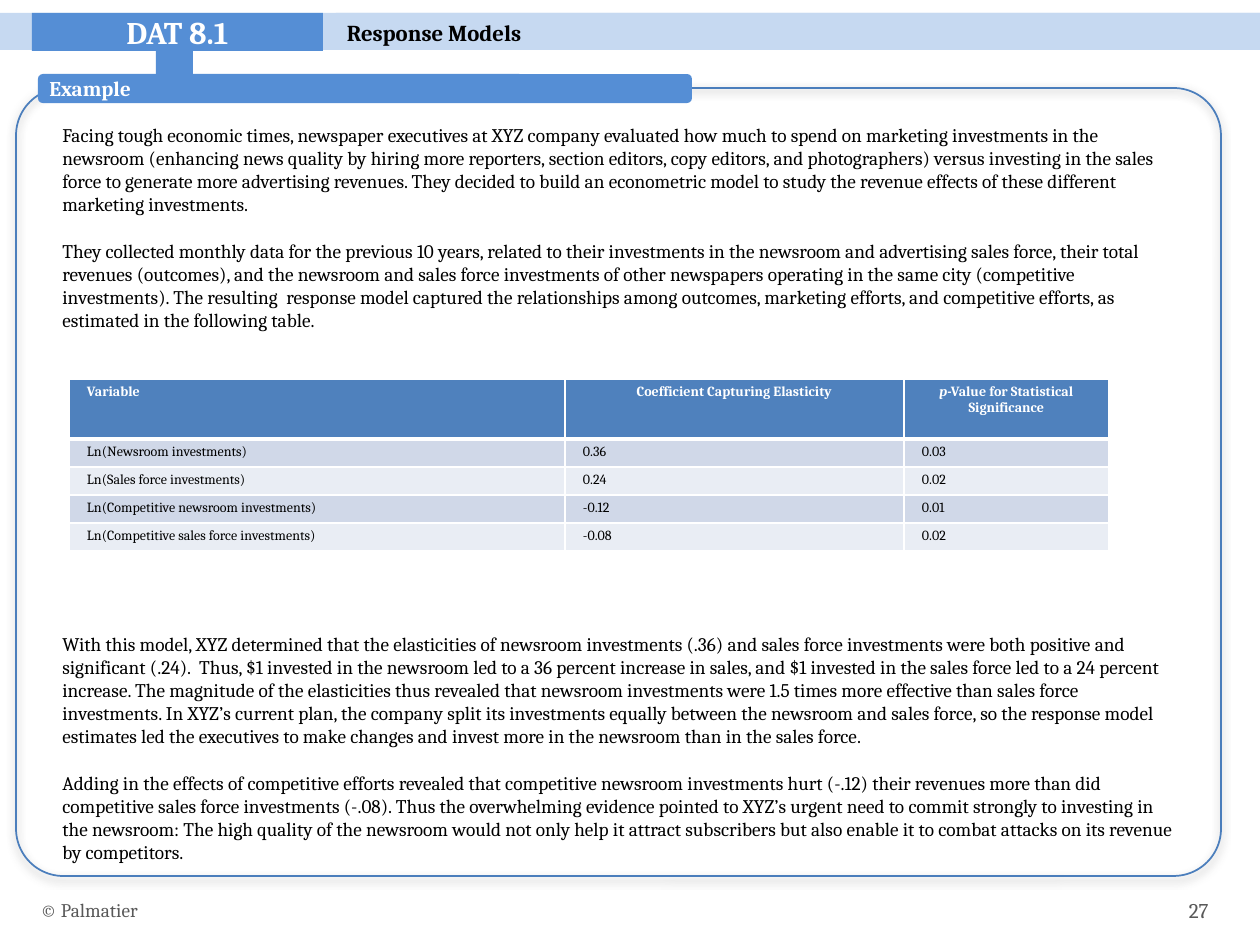
"""Build the Response Models example slide with its elasticity table."""
from lxml import etree
from pptx import Presentation
from pptx import util as u
from pptx.dml.color import RGBColor
from pptx.enum import shapes, text
from pptx.oxml import parse_xml
from pptx.oxml.ns import nsdecls

PX = 914400 // 126
FONT = "Cambria"
BLACK, WHITE = RGBColor(0, 0, 0), RGBColor(255, 255, 255)
GRAY = RGBColor(0x59, 0x59, 0x59)
PALE, BLUE = RGBColor(0xC6, 0xD9, 0xF1), RGBColor(0x55, 0x8E, 0xD5)
OUTLINE, HEAD = RGBColor(0x4B, 0x7E, 0xBC), RGBColor(0x4F, 0x81, 0xBD)
BANDS = RGBColor(0xD0, 0xD8, 0xE8), RGBColor(0xE9, 0xED, 0xF4)
RECT = shapes.MSO_SHAPE.RECTANGLE
ROUND = shapes.MSO_SHAPE.ROUNDED_RECTANGLE
TOP, MIDDLE = text.MSO_ANCHOR.TOP, text.MSO_ANCHOR.MIDDLE
LEFT, CENTER, RIGHT = text.PP_ALIGN.LEFT, text.PP_ALIGN.CENTER, text.PP_ALIGN.RIGHT

STORY = [
    (0, "Facing tough economic times, newspaper executives at XYZ company evaluated how much to spend on "
        "marketing investments in the newsroom (enhancing news quality by hiring more reporters, section "
        "editors, copy editors, and photographers) versus investing in the sales force to generate more "
        "advertising revenues. They decided to build an econometric model to study the revenue effects of "
        "these different marketing investments."),
    (13.2, "They collected monthly data for the previous 10 years, related to their investments in the "
           "newsroom and advertising sales force, their total revenues (outcomes), and the newsroom and sales "
           "force investments of other newspapers operating in the same city (competitive investments). The "
           "resulting  response model captured the relationships among outcomes, marketing efforts, and "
           "competitive efforts, as estimated in the following table."),
    (172, "With this model, XYZ determined that the elasticities of newsroom investments (.36) and sales force "
          "investments were both positive and significant (.24).  Thus, $1 invested in the newsroom led to a "
          "36 percent increase in sales, and $1 invested in the sales force led to a 24 percent increase. The "
          "magnitude of the elasticities thus revealed that newsroom investments were 1.5 times more effective "
          "than sales force investments. In XYZ’s current plan, the company split its investments equally "
          "between the newsroom and sales force, so the response model estimates led the executives to make "
          "changes and invest more in the newsroom than in the sales force."),
    (13.2, "Adding in the effects of competitive efforts revealed that competitive newsroom investments hurt "
           "(-.12) their revenues more than did competitive sales force investments (-.08). Thus the "
           "overwhelming evidence pointed to XYZ’s urgent need to commit strongly to investing in the "
           "newsroom: The high quality of the newsroom would not only help it attract subscribers but also "
           "enable it to combat attacks on its revenue by competitors."),
]
ELASTICITIES = [
    ("Variable", "Coefficient Capturing Elasticity", "p-Value for Statistical Significance"),
    ("Ln(Newsroom investments)", "0.36", "0.03"),
    ("Ln(Sales force investments)", "0.24", "0.02"),
    ("Ln(Competitive newsroom investments)", "-0.12", "0.01"),
    ("Ln(Competitive sales force investments)", "-0.08", "0.02"),
]
COLUMNS, ROWS = (496, 339, 205), (60, 28, 28, 28, 28)


def px(*lengths):
    return [length * PX for length in lengths]


def write(paragraph, words, size, color, align=LEFT, **styles):
    paragraph.alignment = align
    run = paragraph.add_run()
    run.text = words
    run.font.color.rgb = color
    for key, value in dict(name=FONT, size=u.Pt(size), **styles).items():
        setattr(run.font, key, value)


def set_frame(frame, anchor, side=None, edge=None):
    frame.word_wrap, frame.vertical_anchor = True, anchor
    if side is not None:
        frame.margin_left = frame.margin_right = side * PX
        frame.margin_top = frame.margin_bottom = edge * PX
    return frame.paragraphs[0]


def add_block(slide, preset, box, fill=None):
    block = slide.shapes.add_shape(preset, *px(*box))
    block.shadow.inherit = False
    block.line.fill.background()
    if fill is None:
        block.fill.background()
    else:
        block.fill.solid()
        block.fill.fore_color.rgb = fill
    return block


def add_caption(slide, box, words, size, align):
    caption = slide.shapes.add_textbox(*px(*box))
    write(set_frame(caption.text_frame, MIDDLE), words, size, GRAY, align)


def add_story(slide):
    story = slide.shapes.add_textbox(*px(50, 117, 1137, 759)).text_frame
    paragraph = set_frame(story, TOP)
    for index, (gap, words) in enumerate(STORY):
        if index:
            paragraph = story.add_paragraph()
        paragraph.space_before = u.Pt(gap)
        write(paragraph, words, 11, BLACK)


def add_border(slide):
    border = add_block(slide, ROUND, (16, 88, 1205, 788))
    border.adjustments[0] = 0.06
    border.line.color.rgb = OUTLINE
    border.line.width = u.Pt(1)
    effects = border._element.spPr.find("{*}effectLst")
    effects.append(parse_xml(
        f'<a:outerShdw {nsdecls("a")} blurRad="{u.Pt(5)}" dist="{u.Pt(2)}" dir="5400000" rotWithShape="0">'
        '<a:srgbClr val="808080"><a:alpha val="75000"/></a:srgbClr></a:outerShdw>'))


def border_cell(cell, is_head):
    properties = cell._tc.get_or_add_tcPr()
    for index, side in enumerate(("lnL", "lnR", "lnT", "lnB")):
        width = u.Pt(3 if is_head and side == "lnB" else 1)
        line = parse_xml(f'<a:{side} {nsdecls("a")} w="{width}"/>')
        color = etree.SubElement(line, line.tag.replace(side, "solidFill"))
        etree.SubElement(color, line.tag.replace(side, "srgbClr"), val=str(WHITE))
        properties.insert(index, line)


def add_elasticities(slide):
    table = slide.shapes.add_table(len(ROWS), len(COLUMNS), *px(69, 379, sum(COLUMNS), sum(ROWS))).table
    for column, width in zip(table.columns, COLUMNS):
        column.width = width * PX
    for row, (height, values) in enumerate(zip(ROWS, ELASTICITIES)):
        table.rows[row].height = height * PX
        is_head = row == 0
        for column, words in enumerate(values):
            cell = table.cell(row, column)
            cell.margin_left = cell.margin_right = 18 * PX
            cell.margin_top = cell.margin_bottom = 5 * PX
            cell.fill.solid()
            cell.fill.fore_color.rgb = HEAD if is_head else BANDS[(row - 1) % 2]
            border_cell(cell, is_head)
            paragraph = cell.text_frame.paragraphs[0]
            style = dict(size=8, color=WHITE if is_head else BLACK, bold=is_head,
                         align=CENTER if is_head and column else LEFT)
            if words.startswith("p-"):
                write(paragraph, "p", italic=True, **style)
                words = words[1:]
            write(paragraph, words, italic=False, **style)


def main():
    deck = Presentation()
    deck.slide_width, deck.slide_height = px(1260, 945)
    slide = deck.slides.add_slide(deck.slide_layouts[6])
    add_story(slide)
    add_block(slide, RECT, (0, 13, 1260, 37), PALE)
    title = add_block(slide, RECT, (336, 13, 924, 37), PALE)
    write(set_frame(title.text_frame, TOP, 11, 6), "Response Models", 13, BLACK, bold=True)
    number = add_block(slide, RECT, (32, 13, 291, 38), BLUE)
    write(set_frame(number.text_frame, MIDDLE, 10, 5), "DAT 8.1", 18, WHITE, CENTER, bold=True)
    add_border(slide)
    label = add_block(slide, ROUND, (38, 74, 654, 29), BLUE)
    write(set_frame(label.text_frame, MIDDLE, 10, 5), "Example", 12, WHITE, bold=True)
    add_elasticities(slide)
    add_caption(slide, (28, 885, 844, 50), "© Palmatier", 11, LEFT)
    add_caption(slide, (1144, 885, 77, 50), "27", 12, RIGHT)
    add_block(slide, RECT, (156, 49, 37, 47), BLUE)
    deck.save("out.pptx")


if __name__ == "__main__":
    main()
